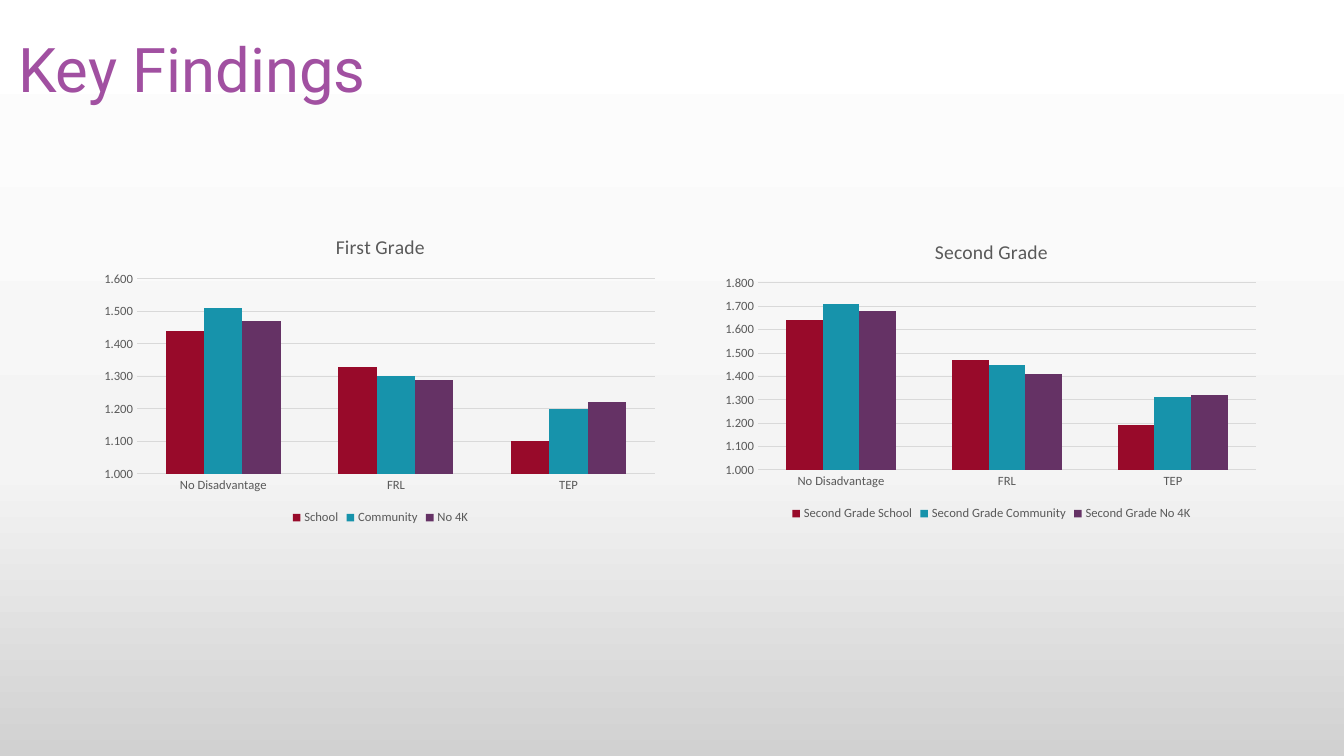
from copy import deepcopy
from dataclasses import dataclass

from lxml.etree import SubElement
from pptx import Presentation
from pptx.chart.data import CategoryChartData
from pptx.dml.color import RGBColor
from pptx.enum.chart import XL_CHART_TYPE, XL_LEGEND_POSITION, XL_TICK_MARK
from pptx.enum.text import MSO_ANCHOR, PP_ALIGN
from pptx.oxml.ns import qn
from pptx.util import Emu, Pt

SLIDE_WIDTH, SLIDE_HEIGHT = 1344, 756
EMU_PER_PX = 12192000 / SLIDE_WIDTH
GROUPS = ("No Disadvantage", "FRL", "TEP")
PROGRAM_COLORS = ("980A2A", "1793AB", "653265")
LABEL_GRAY, GRID_GRAY = "595959", "D9D9D9"
BACKDROP = ((0, "FFFFFF"), (0.62, "F4F4F4"), (1, "D1D1D1"))


@dataclass(frozen=True)
class Box:
    left: int
    top: int
    width: int
    height: int

    def emu(self) -> tuple[Emu, ...]:
        return tuple(px(n) for n in (self.left, self.top, self.width, self.height))


@dataclass(frozen=True)
class GradeChart:
    heading: str
    frame: Box
    plot: Box
    top_score: float
    scores: dict[str, tuple[float, ...]]


GRADES = (
    GradeChart("First Grade", Box(93, 218, 575, 311), Box(137, 279, 518, 195), 1.6, {
        "School": (1.44, 1.33, 1.1),
        "Community": (1.51, 1.3, 1.2),
        "No 4K": (1.47, 1.29, 1.22),
    }),
    GradeChart("Second Grade", Box(715, 223, 553, 302), Box(758, 283, 498, 187), 1.8, {
        "Second Grade School": (1.64, 1.47, 1.19),
        "Second Grade Community": (1.71, 1.45, 1.31),
        "Second Grade No 4K": (1.68, 1.41, 1.32),
    }),
)


def px(length: int) -> Emu:
    return Emu(round(length * EMU_PER_PX))


def color(value: str) -> RGBColor:
    return RGBColor.from_string(value)


def apply(target, values: dict) -> None:
    for name, value in values.items():
        setattr(target, name, value)


def style_font(font, size: float, hue: str, face: str = "Calibri") -> None:
    apply(font, {"size": Pt(size), "name": face, "bold": False})
    font.color.rgb = color(hue)


def style_line(line) -> None:
    line.color.rgb = color(GRID_GRAY)
    line.width = Pt(0.75)


def paint_backdrop(slide) -> None:
    fill = slide.background.fill
    fill.gradient()
    fill.gradient_angle = 270
    stop_list = next(slide.background._cSld.iter(qn("a:gsLst")))
    stop_list.append(deepcopy(stop_list[-1]))
    for stop, (position, hue) in zip(fill.gradient_stops, BACKDROP):
        stop.position = position
        stop.color.rgb = color(hue)


def place_plot(chart, grade: GradeChart) -> None:
    """Fix the inner plot area as fractions of the chart frame."""
    plot_area = chart._chartSpace.chart.plotArea
    for old in plot_area.findall(qn("c:layout")):
        plot_area.remove(old)
    layout = SubElement(plot_area, qn("c:layout"))
    plot_area.insert(0, layout)
    manual = SubElement(layout, qn("c:manualLayout"))
    frame, plot = grade.frame, grade.plot
    settings = {
        "layoutTarget": "inner", "xMode": "edge", "yMode": "edge",
        "x": (plot.left - frame.left) / frame.width,
        "y": (plot.top - frame.top) / frame.height,
        "w": plot.width / frame.width,
        "h": plot.height / frame.height,
    }
    for tag, value in settings.items():
        SubElement(manual, qn(f"c:{tag}")).set("val", str(value))


def add_grade_chart(slide, grade: GradeChart) -> None:
    data = CategoryChartData(number_format="0.000")
    data.categories = GROUPS
    for program, scores in grade.scores.items():
        data.add_series(program, scores)
    chart = slide.shapes.add_chart(
        XL_CHART_TYPE.COLUMN_CLUSTERED, *grade.frame.emu(), data).chart
    style_font(chart.font, 10, "000000")

    # Heading and legend
    heading = chart.chart_title
    heading.text_frame.text = grade.heading
    style_font(heading.text_frame.paragraphs[0].runs[0].font, 14, LABEL_GRAY)
    heading.include_in_layout = False
    chart.has_legend = True
    apply(chart.legend, {"position": XL_LEGEND_POSITION.BOTTOM,
                         "include_in_layout": False})
    style_font(chart.legend.font, 9, LABEL_GRAY)

    # Axes
    groups, scale = chart.category_axis, chart.value_axis
    for axis in (groups, scale):
        apply(axis, {"major_tick_mark": XL_TICK_MARK.NONE,
                     "minor_tick_mark": XL_TICK_MARK.NONE})
        style_font(axis.tick_labels.font, 9, LABEL_GRAY)
    style_line(groups.format.line)
    apply(scale, {"minimum_scale": 1, "maximum_scale": grade.top_score,
                  "major_unit": 0.1, "has_major_gridlines": True})
    apply(scale.tick_labels, {"number_format": "0.000",
                              "number_format_is_linked": False})
    scale.format.line.fill.background()
    style_line(scale.major_gridlines.format.line)

    # Columns
    columns = chart.plots[0]
    apply(columns, {"gap_width": 150, "overlap": 0, "vary_by_categories": False})
    for program, hue in zip(columns.series, PROGRAM_COLORS):
        program.format.fill.solid()
        program.format.fill.fore_color.rgb = color(hue)
    place_plot(chart, grade)


def add_title(slide) -> None:
    title = slide.shapes.title
    left, top, width, height = Box(8, 0, 1159, 146).emu()
    apply(title, {"left": left, "top": top, "width": width, "height": height})
    title.text_frame.text = "Key Findings"
    apply(title.text_frame, {"vertical_anchor": MSO_ANCHOR.MIDDLE, "word_wrap": True})
    line = title.text_frame.paragraphs[0]
    apply(line, {"alignment": PP_ALIGN.LEFT, "line_spacing": 0.9})
    style_font(line.runs[0].font, 44, "A150A1", "Roboto")


def main() -> None:
    deck = Presentation()
    apply(deck, {"slide_width": px(SLIDE_WIDTH), "slide_height": px(SLIDE_HEIGHT)})
    slide = deck.slides.add_slide(deck.slide_layouts.get_by_name("Title Only"))
    paint_backdrop(slide)
    add_title(slide)
    for grade in GRADES:
        add_grade_chart(slide, grade)
    deck.save("out.pptx")


if __name__ == "__main__":
    main()
